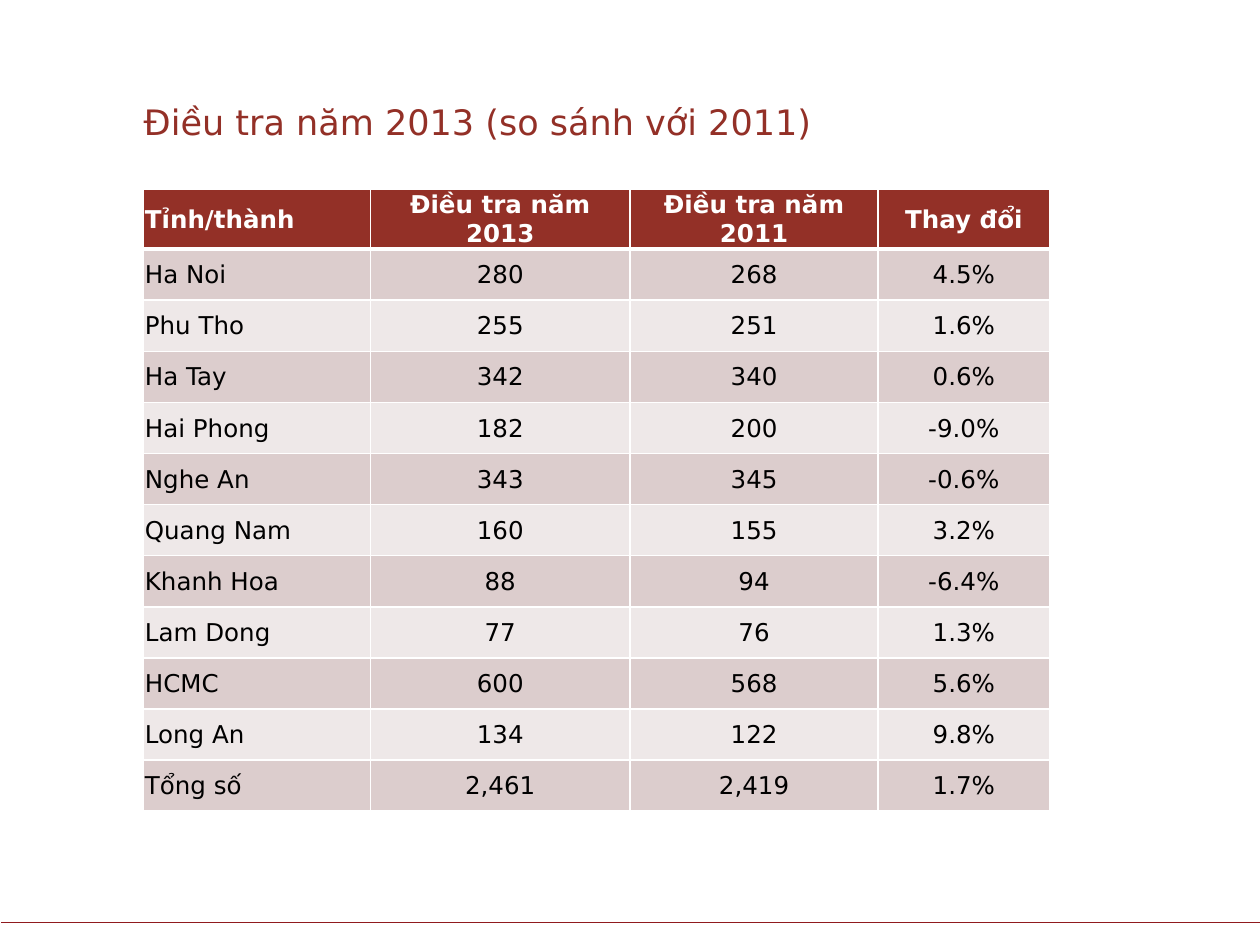
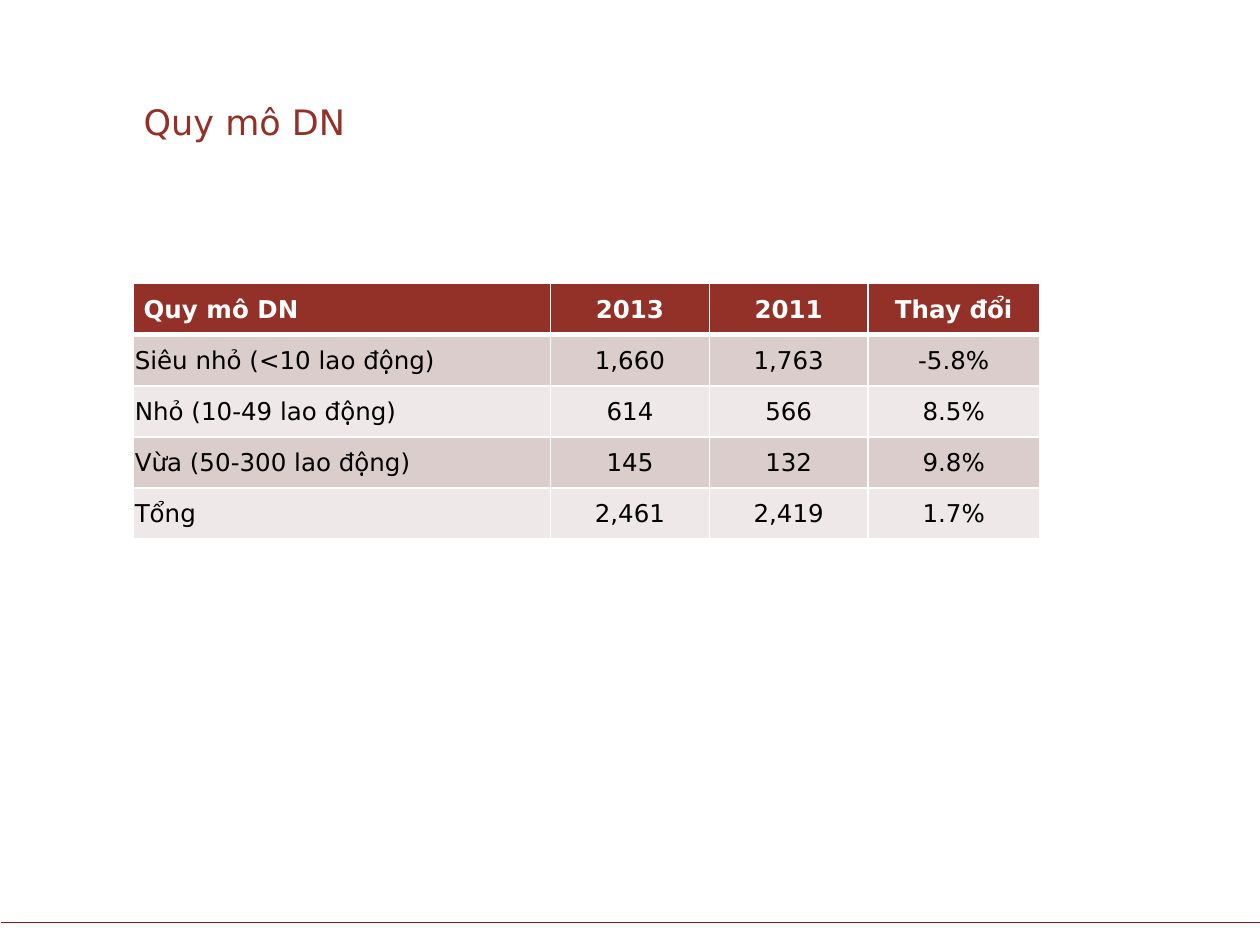
from lxml import etree
from pptx import Presentation, util as u
from pptx.dml.color import RGBColor
from pptx.enum import shapes, text
from pptx.oxml import ns

SURVEY_ROWS = [
    ("Tỉnh/thành", "Điều tra năm 2013", "Điều tra năm 2011", "Thay đổi"),
    ("Ha Noi", "280", "268", "4.5%"),
    ("Phu Tho", "255", "251", "1.6%"),
    ("Ha Tay", "342", "340", "0.6%"),
    ("Hai Phong", "182", "200", "-9.0%"),
    ("Nghe An", "343", "345", "-0.6%"),
    ("Quang Nam", "160", "155", "3.2%"),
    ("Khanh Hoa", "88", "94", "-6.4%"),
    ("Lam Dong", "77", "76", "1.3%"),
    ("HCMC", "600", "568", "5.6%"),
    ("Long An", "134", "122", "9.8%"),
    ("Tổng số", "2,461", "2,419", "1.7%"),
]
SIZE_ROWS = [
    ("Quy mô DN", "2013", "2011", "Thay đổi"),
    ("Siêu nhỏ (<10 lao động)", "1,660", "1,763", "-5.8%"),
    ("Nhỏ (10-49 lao động)", "614", "566", "8.5%"),
    ("Vừa (50-300 lao động)", "145", "132", "9.8%"),
    ("Tổng", "2,461", "2,419", "1.7%"),
]


def rgb(hex_color):
    return RGBColor.from_string(hex_color)


class Deck:
    FONT = "DejaVu Sans"
    ACCENT, FOOTER_LINE = "933027", "901A1E"
    WHITE, BLACK = "FFFFFF", "000000"
    BANDS = ("DCCDCD", "EEE8E8")

    def __init__(self):
        self.presentation = Presentation()
        self.presentation.slide_width = u.Inches(10)
        self.presentation.slide_height = u.Inches(7.5)
        self.slide = None

    def add_slide(self, title):
        """Start a slide with the shared footer line and title."""
        self.slide = self.presentation.slides.add_slide(self.presentation.slide_layouts[6])
        self.add_footer_line()
        self.add_title(title)

    def add_footer_line(self):
        y = u.Inches(7.32)
        line = self.slide.shapes.add_connector(
            shapes.MSO_CONNECTOR.STRAIGHT, u.Inches(10.01), y, u.Inches(0.01), y)
        line.line.color.rgb = rgb(self.FOOTER_LINE)
        line.line.width = u.Pt(0.75)
        etree.SubElement(line._element.spPr, ns.qn("a:effectLst"))

    def add_title(self, title):
        box = self.slide.shapes.add_textbox(
            u.Inches(1.14), u.Inches(0.5), u.Inches(7.19), u.Inches(0.63))
        frame = box.text_frame
        frame.word_wrap = True
        frame.vertical_anchor = text.MSO_ANCHOR.BOTTOM
        frame.margin_left = frame.margin_right = frame.margin_top = frame.margin_bottom = 0
        self.add_run(frame.paragraphs[0], title, 20, self.ACCENT)

    def add_run(self, paragraph, content, size, color, bold=False):
        run = paragraph.add_run()
        run.text = content
        run.font.name = self.FONT
        run.font.size = u.Pt(size)
        run.font.bold = bold
        run.font.color.rgb = rgb(color)

    def add_table(self, left, top, height, widths, rows):
        """Add a banded table whose first row is the header; return the table."""
        table = self.slide.shapes.add_table(
            len(rows), len(widths), u.Inches(left), u.Inches(top),
            u.Inches(sum(widths)), u.Inches(height)).table
        table.first_row = table.horz_banding = False
        for column, width in zip(table.columns, widths):
            column.width = u.Inches(width)
        for row_index, row in enumerate(rows):
            for column_index, content in enumerate(row):
                self.fill_cell(table.cell(row_index, column_index), content, row_index, column_index)
        return table

    def fill_cell(self, cell, content, row_index, column_index):
        is_header = row_index == 0
        cell.margin_left = cell.margin_right = cell.margin_top = u.Inches(0.01)
        cell.margin_bottom = 0
        cell.vertical_anchor = text.MSO_ANCHOR.MIDDLE
        self.set_borders(cell, L=1, R=1, T=3 if row_index == 1 else 1, B=3 if is_header else 1)
        cell.fill.solid()
        cell.fill.fore_color.rgb = rgb(self.ACCENT if is_header else self.BANDS[(row_index - 1) % 2])
        paragraph = cell.text_frame.paragraphs[0]
        if column_index:
            paragraph.alignment = text.PP_ALIGN.CENTER
        self.add_run(paragraph, content, 14, self.WHITE if is_header else self.BLACK, is_header)

    def set_borders(self, cell, **points):
        """Draw white borders; each key is a side (L, R, T, B), each value a width in points."""
        properties = cell._tc.get_or_add_tcPr()
        for side, width in points.items():
            border = etree.SubElement(properties, ns.qn(f"a:ln{side}"), w=str(u.Pt(width)))
            fill = etree.SubElement(border, ns.qn("a:solidFill"))
            etree.SubElement(fill, ns.qn("a:srgbClr"), val=self.WHITE)


def main():
    deck = Deck()

    deck.add_slide("Điều tra năm 2013 (so sánh với 2011)")
    deck.add_table(1.14, 1.5, 4.87, (1.8, 2.06, 1.97, 1.36), SURVEY_ROWS)

    deck.add_slide("Quy mô DN")
    size_table = deck.add_table(1.06, 2.25, 2.03, (3.31, 1.26, 1.26, 1.36), SIZE_ROWS)
    size_table.cell(0, 0).margin_left = u.Inches(0.08)

    deck.presentation.save("out.pptx")


if __name__ == "__main__":
    main()
